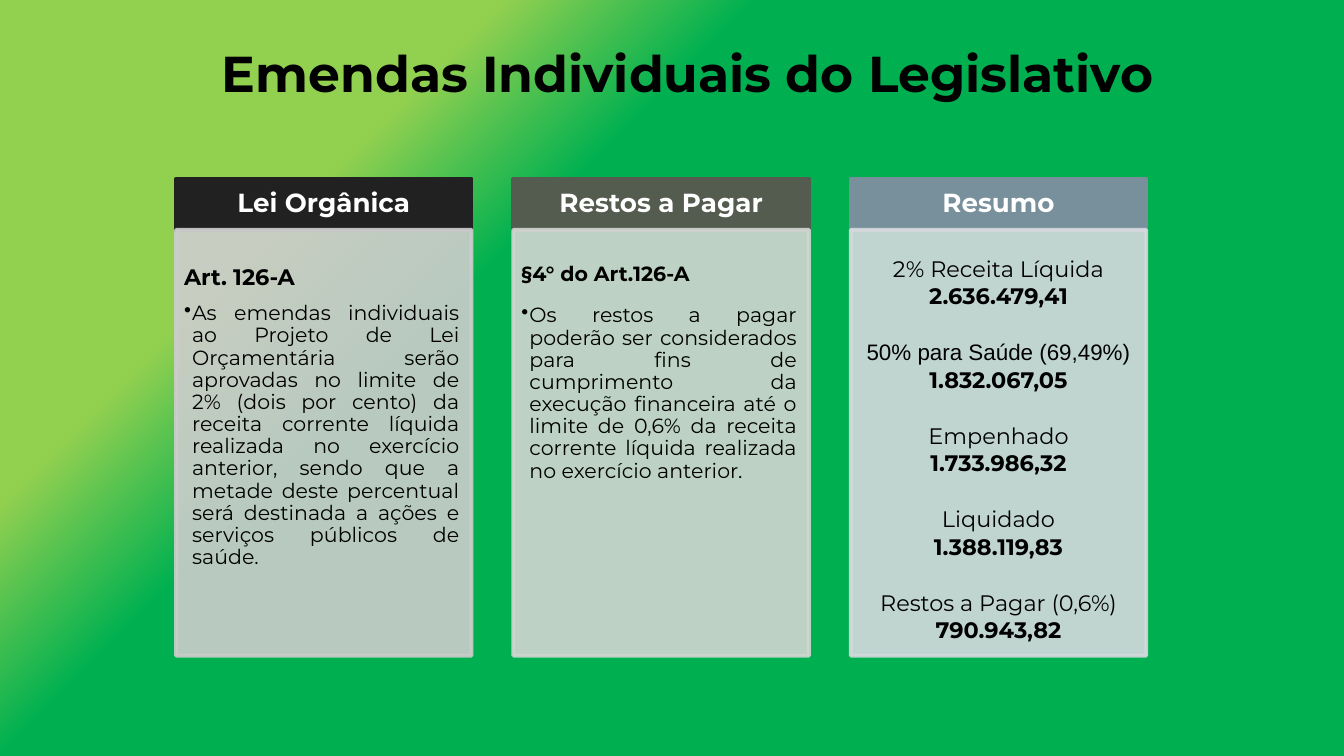
import pptx
import pptx.dml.color
import pptx.enum.shapes
import pptx.enum.text
import pptx.oxml.ns
import pptx.util
from lxml import etree

Inches = pptx.util.Inches
Pt = pptx.util.Pt
RGBColor = pptx.dml.color.RGBColor
Align = pptx.enum.text.PP_ALIGN
Anchor = pptx.enum.text.MSO_ANCHOR
qn = pptx.oxml.ns.qn

FONT = "Montserrat"
BLACK = RGBColor(0x00, 0x00, 0x00)
WHITE = RGBColor(0xFF, 0xFF, 0xFF)
LIME = RGBColor(0x92, 0xD0, 0x50)
GREEN = RGBColor(0x00, 0xB0, 0x50)
CHARCOAL = RGBColor(0x21, 0x21, 0x21)
OLIVE = RGBColor(0x53, 0x5C, 0x4F)
SLATE = RGBColor(0x78, 0x90, 0x9C)
GREY = RGBColor(0xCD, 0xCD, 0xCD)
PALE_OLIVE = RGBColor(0xD2, 0xD6, 0xD1)
PALE_SLATE = RGBColor(0xD7, 0xDA, 0xDF)

SLIDE_WIDTH = 10
SLIDE_HEIGHT = SLIDE_WIDTH * 9 / 16
COLUMN_LEFT, COLUMN_STEP, COLUMN_WIDTH = 1.31, 2.51, 2.2
COLUMN_TOP, HEADER_HEIGHT, BODY_HEIGHT = 1.33, 0.38, 3.17

LAW_TEXT = (
    "As emendas individuais ao Projeto de Lei Orçamentária serão aprovadas no "
    "limite de 2% (dois por cento) da receita corrente líquida realizada no "
    "exercício anterior, sendo que a metade deste percentual será destinada a "
    "ações e serviços públicos de saúde."
)
CARRYOVER_TEXT = (
    "Os restos a pagar poderão ser considerados para fins de cumprimento da "
    "execução financeira até o limite de 0,6% da receita corrente líquida "
    "realizada no exercício anterior."
)
SUMMARY = [
    ("2% Receita Líquida", "2.636.479,41", FONT),
    ("50% para Saúde (69,49%)", "1.832.067,05", "Arial"),
    ("Empenhado", "1.733.986,32", FONT),
    ("Liquidado", "1.388.119,83", FONT),
    ("Restos a Pagar (0,6%)", "790.943,82", FONT),
]


def set_frame(shape, margins, anchor):
    frame = shape.text_frame
    frame.word_wrap = True
    frame.vertical_anchor = anchor
    (frame.margin_left, frame.margin_top,
     frame.margin_right, frame.margin_bottom) = map(Inches, margins)
    return frame


def write_line(frame, text, size, bold=False, color=BLACK, align=Align.CENTER,
               font=FONT, before=0, bullet=False):
    """Fill the first paragraph if it is still empty, otherwise add one."""
    para = frame.paragraphs[0]
    if para.runs:
        para = frame.add_paragraph()
    para.alignment = align
    para.line_spacing = 0.9
    para.space_before = Pt(before)
    if bullet:
        props = para._p.get_or_add_pPr()
        props.set("marL", str(Inches(0.06)))
        props.set("indent", str(-Inches(0.06)))
        etree.SubElement(props, qn("a:buChar")).set("char", "•")
    para.add_run().text = text
    para.font.name = font
    para.font.size = Pt(size)
    para.font.bold = bold
    para.font.color.rgb = color


def add_panel(page, left, top, width, height, color, opacity=100):
    panel = page.shapes.add_shape(
        pptx.enum.shapes.MSO_SHAPE.RECTANGLE,
        Inches(left), Inches(top), Inches(width), Inches(height))
    panel.shadow.inherit = False
    panel.fill.solid()
    panel.line.width = Pt(2)
    panel.fill.fore_color.rgb = panel.line.color.rgb = color
    if opacity < 100:
        for node in panel._element.spPr.iter(qn("a:srgbClr")):
            etree.SubElement(node, qn("a:alpha")).set("val", str(opacity * 1000))
    return panel


def add_background(page):
    fill = page.background.fill
    fill.gradient()
    fill.gradient_angle = 315
    for stop, color, position in zip(fill.gradient_stops, (LIME, GREEN), (0.24, 0.36)):
        stop.color.rgb = color
        stop.position = position


def add_title(page, left, top, width, height):
    box = page.shapes.add_textbox(Inches(left), Inches(top), Inches(width), Inches(height))
    frame = set_frame(box, (0.1, 0.05, 0.1, 0.05), Anchor.MIDDLE)
    write_line(frame, "Emendas Individuais do Legislativo", 27, bold=True, align=Align.LEFT)


def add_column(page, index, heading, header_color, body_color, margins):
    """Draw the header and body of one column; return the body's text frame."""
    left = COLUMN_LEFT + index * COLUMN_STEP
    header = add_panel(page, left, COLUMN_TOP, COLUMN_WIDTH, HEADER_HEIGHT, header_color)
    frame = set_frame(header, (0.11, 0.06, 0.11, 0.06), Anchor.MIDDLE)
    write_line(frame, heading, 14, bold=True, color=WHITE)
    body = add_panel(page, left, COLUMN_TOP + HEADER_HEIGHT, COLUMN_WIDTH,
                     BODY_HEIGHT, body_color, opacity=90)
    return set_frame(body, margins, Anchor.TOP)


def write_article(frame, title, title_size, text, gap):
    write_line(frame, title, title_size, bold=True, align=Align.JUSTIFY)
    write_line(frame, text, 11, align=Align.JUSTIFY, before=gap, bullet=True)


def write_summary(frame):
    for index, (label, amount, font) in enumerate(SUMMARY):
        write_line(frame, label, 12, font=font, before=17 if index else 0)
        write_line(frame, amount, 12, bold=True, before=1.8)


def main():
    deck = pptx.Presentation()
    deck.slide_width, deck.slide_height = Inches(SLIDE_WIDTH), Inches(SLIDE_HEIGHT)
    page = deck.slides.add_slide(deck.slide_layouts[6])
    add_background(page)
    add_title(page, 1.55, 0.26, 8.1, 0.61)

    # Legal text columns
    law = add_column(page, 0, "Lei Orgânica", CHARCOAL, GREY, (0.06, 0.27, 0.09, 0.1))
    write_article(law, "Art. 126-A", 12, LAW_TEXT, 6.8)
    carryover = add_column(page, 1, "Restos a Pagar", OLIVE, PALE_OLIVE,
                           (0.06, 0.25, 0.09, 0.1))
    write_article(carryover, "§4° do Art.126-A", 11, CARRYOVER_TEXT, 10.5)

    # Summary of amounts
    summary = add_column(page, 2, "Resumo", SLATE, PALE_SLATE, (0.01, 0.21, 0.01, 0.02))
    write_summary(summary)

    deck.save("out.pptx")


if __name__ == "__main__":
    main()
